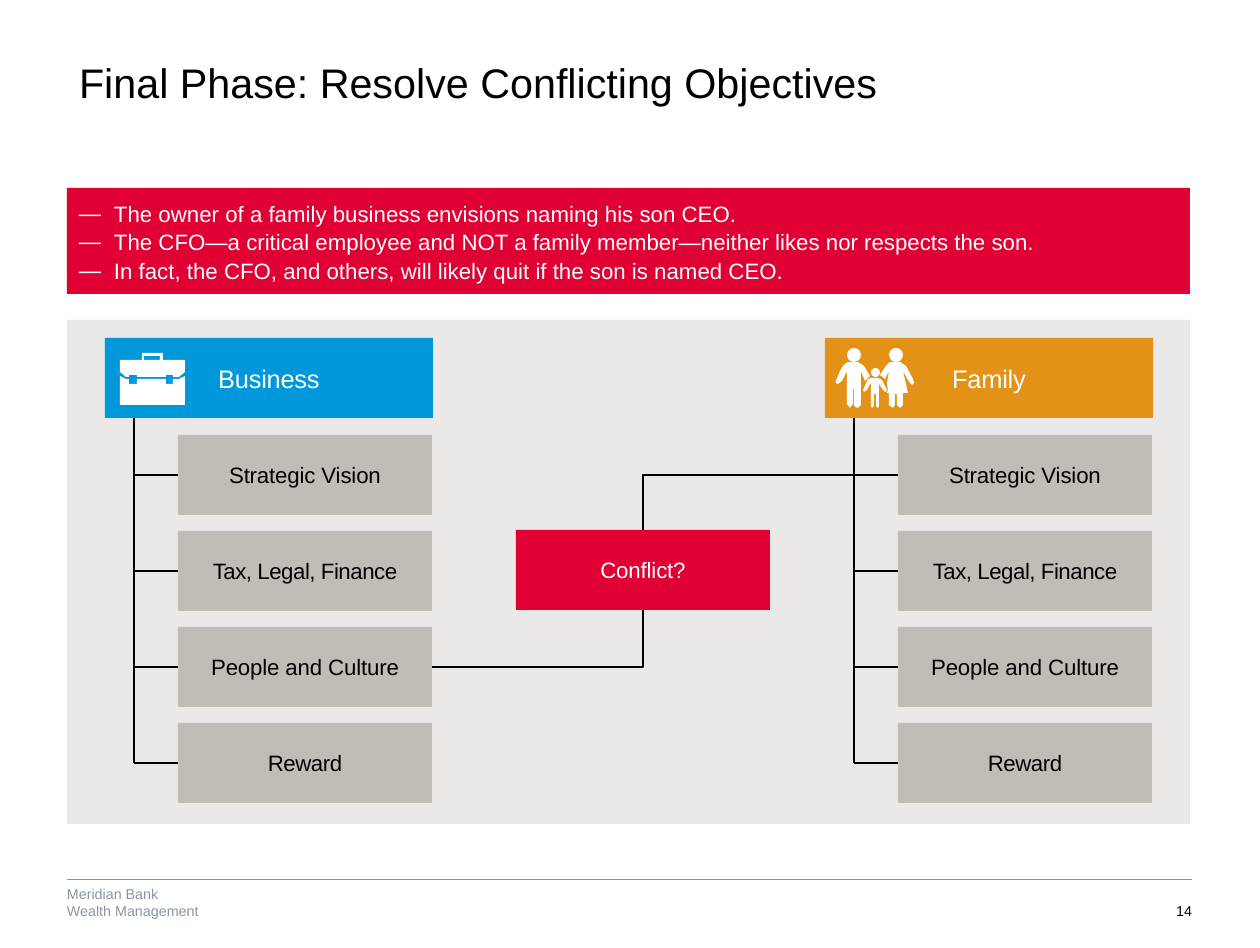
"""Build the slide on resolving conflicting business and family objectives."""
from lxml.etree import SubElement
from pptx import Presentation
from pptx.dml.color import RGBColor
from pptx.enum.shapes import MSO_CONNECTOR as Link, MSO_SHAPE as Shape
from pptx.enum.text import MSO_ANCHOR as Anchor, PP_ALIGN as Align
from pptx.oxml.ns import qn
from pptx.util import Pt

PX = 8000
SLIDE = (1260, 948)
BLACK, WHITE, RED, GREY = "000000", "FFFFFF", "E00034", "8996A0"
PANEL, BOX = "EAE9E7", "C1BCB6"

TITLE = "Final Phase: Resolve Conflicting Objectives"
SITUATION = [
    "The owner of a family business envisions naming his son CEO.",
    "The CFO―a critical employee and NOT a family member―neither likes nor respects the son.",
    "In fact, the CFO, and others, will likely quit if the son is named CEO.",
]
SIDES = [("Business", "0098DB", 105), ("Family", "E29317", 825)]
OBJECTIVES = [
    ("Strategic Vision", -10),
    ("Tax, Legal, Finance", -30),
    ("People and Culture", -10),
    ("Reward", -30),
]
CONFLICT = "Conflict?"
FOOTER = ["Meridian Bank", "Wealth Management"]
PAGE = "14"

BRIEFCASE = [
    [(120, 360), (142, 360), (142, 353), (163, 353), (163, 360), (185, 360),
     (185, 372), (179, 377), (173, 377), (173, 375), (166, 375), (166, 377),
     (137, 377), (137, 375), (129, 375), (129, 377), (126, 377), (120, 372)],
    [(144, 356), (160, 356), (160, 360), (144, 360)],
    [(120, 376), (126, 379), (129, 379), (129, 384), (137, 384), (137, 379),
     (166, 379), (166, 384), (173, 384), (173, 379), (179, 379), (185, 376),
     (185, 405), (120, 405)],
]
MAN = [
    (836, 381), (841, 369), (844, 365), (848, 362), (858, 362), (864, 366),
    (870, 376), (865, 381), (861, 371), (861, 405), (858, 408), (855, 407),
    (854, 405), (854, 390), (853, 389), (853, 404), (850, 408), (847, 404),
    (847, 371), (842, 381), (838, 384), (836, 383),
]
WOMAN = [
    (914, 383), (912, 385), (909, 382), (903, 371), (908, 393), (903, 393),
    (903, 405), (900, 408), (897, 405), (897, 394), (895, 394), (895, 405),
    (893, 408), (889, 405), (889, 393), (887, 393), (888, 390), (887, 384),
    (889, 371), (885, 379), (880, 375), (886, 366), (890, 362), (900, 362),
    (906, 366), (913, 379),
]
CHILD = [
    (874, 394), (874, 406), (872, 408), (871, 406), (871, 384), (870, 384),
    (867, 390), (864, 392), (863, 390), (868, 379), (872, 378), (878, 378),
    (882, 380), (887, 390), (886, 392), (884, 391), (879, 384), (879, 406),
    (878, 408), (876, 406), (876, 394),
]
HEADS = [(847, 348, 14), (889, 348, 14), (871, 368, 9)]

HEADER_TOP, HEADER_W, BOX_H = 338, 328, 80
ROW_TOP, ROW_PITCH, ROW_INDENT, ROW_W = 435, 96, 73, 254
TRUNK_INDENT = 29
CONFLICT_LEFT, CONFLICT_TOP = 516, 530

prs = Presentation()
prs.slide_width, prs.slide_height = (side * PX for side in SLIDE)
shapes = prs.slides.add_slide(prs.slide_layouts[6]).shapes


def color(value):
    return RGBColor.from_string(value)


def px(*lengths):
    return [length * PX for length in lengths]


def paint(shape, fill):
    shape.fill.solid()
    shape.fill.fore_color.rgb = color(fill)
    shape.line.fill.background()
    shape.shadow.inherit = False
    return shape


def write(shape, lines, size, ink, align=Align.LEFT, spacing=None, tracking=0,
          margins=(0, 0, 0, 0), anchor=Anchor.TOP, wrap=True):
    frame = shape.text_frame
    left, top, right, bottom = px(*margins)
    layout = {"margin_left": left, "margin_top": top, "margin_right": right,
              "margin_bottom": bottom, "vertical_anchor": anchor, "word_wrap": wrap}
    for name, value in layout.items():
        setattr(frame, name, value)
    for number, line in enumerate(lines):
        paragraph = frame.add_paragraph() if number else frame.paragraphs[0]
        paragraph.alignment, paragraph.line_spacing = align, spacing
        run = paragraph.add_run()
        run.text = line
        for name, value in {"name": "Arial", "size": Pt(size)}.items():
            setattr(run.font, name, value)
        run.font.color.rgb = color(ink)
        if tracking:
            run._r.get_or_add_rPr().set("spc", str(tracking))
    return frame


def rectangle(left, top, width, height, fill):
    return paint(shapes.add_shape(Shape.RECTANGLE, *px(left, top, width, height)), fill)


def label(left, top, width, text, fill, size, ink, tracking=-10):
    box = rectangle(left, top, width, BOX_H, fill)
    write(box, [text], size, ink, Align.CENTER, tracking=tracking,
          margins=(11, 11, 11, 11), anchor=Anchor.MIDDLE)
    return box


def connect(start, end, kind=Link.STRAIGHT, ink=BLACK, width=1):
    line = shapes.add_connector(kind, *px(*start, *end))
    line.line.color.rgb = color(ink)
    line.line.width = Pt(width)
    SubElement(line._element.spPr, qn("a:effectLst"))
    return line


def outline(contours):
    builder = shapes.build_freeform(*contours[0][0], scale=PX)
    for number, contour in enumerate(contours):
        if number:
            builder.move_to(*contour[0])
        builder.add_line_segments(contour[1:], close=True)
    paint(builder.convert_to_shape(), WHITE)


def dash_bullets(frame, indent):
    for paragraph in frame.paragraphs:
        props = paragraph._p.get_or_add_pPr()
        props.set("marL", str(indent * PX))
        props.set("indent", str(-indent * PX))
        ink = SubElement(props, qn("a:buClr"))
        SubElement(ink, qn("a:srgbClr"), val=WHITE)
        SubElement(props, qn("a:buFont"), typeface="Arial")
        SubElement(props, qn("a:buChar"), char="―")


write(shapes.add_textbox(*px(67, 63, 1057, 95)), [TITLE], 26, BLACK,
      spacing=0.9, margins=(12, 0, 0, 0))
situation = write(rectangle(67, 188, 1123, 106, RED), SITUATION, 14, WHITE,
                  spacing=Pt(18), margins=(12, 6, 0, 6), anchor=Anchor.MIDDLE)
dash_bullets(situation, 35)
rectangle(67, 320, 1123, 504, PANEL)

rows = {}
for side, fill, left in SIDES:
    label(left, HEADER_TOP, HEADER_W, side, fill, 16, WHITE)
    trunk, row_left = left + TRUNK_INDENT, left + ROW_INDENT
    for number, (objective, tracking) in enumerate(OBJECTIVES):
        top = ROW_TOP + number * ROW_PITCH
        middle = top + BOX_H // 2
        row = label(row_left, top, ROW_W, objective, BOX, 14, BLACK, tracking)
        connect((trunk, middle), (row_left, middle)).end_connect(row, 1)
        rows[side, objective] = row
    connect((trunk, HEADER_TOP + BOX_H), (trunk, middle))

conflict = label(CONFLICT_LEFT, CONFLICT_TOP, ROW_W, CONFLICT, RED, 14, WHITE)
for key, row_site, conflict_site in [
    (("Family", "Strategic Vision"), 1, 0),
    (("Business", "People and Culture"), 3, 2),
]:
    elbow = connect((0, 0), (0, 0), Link.ELBOW)
    elbow.begin_connect(rows[key], row_site)
    elbow.end_connect(conflict, conflict_site)
    elbow._element.spPr.find(qn("a:prstGeom")).set("prst", "bentConnector2")

for icon in (BRIEFCASE, [MAN], [WOMAN], [CHILD]):
    outline(icon)
for left, top, size in HEADS:
    paint(shapes.add_shape(Shape.OVAL, *px(left, top, size, size)), WHITE)

connect((67, 879), (1192, 879), ink=GREY, width=0.5)
write(shapes.add_textbox(*px(67, 880, 134, 40)), FOOTER, 9, GREY,
      margins=(0, 5, 0, 0), wrap=False)
write(shapes.add_textbox(*px(1125, 880, 67, 39)), [PAGE], 9, BLACK, Align.RIGHT,
      margins=(0, 5, 0, 0), anchor=Anchor.BOTTOM, wrap=False)

prs.save("out.pptx")
